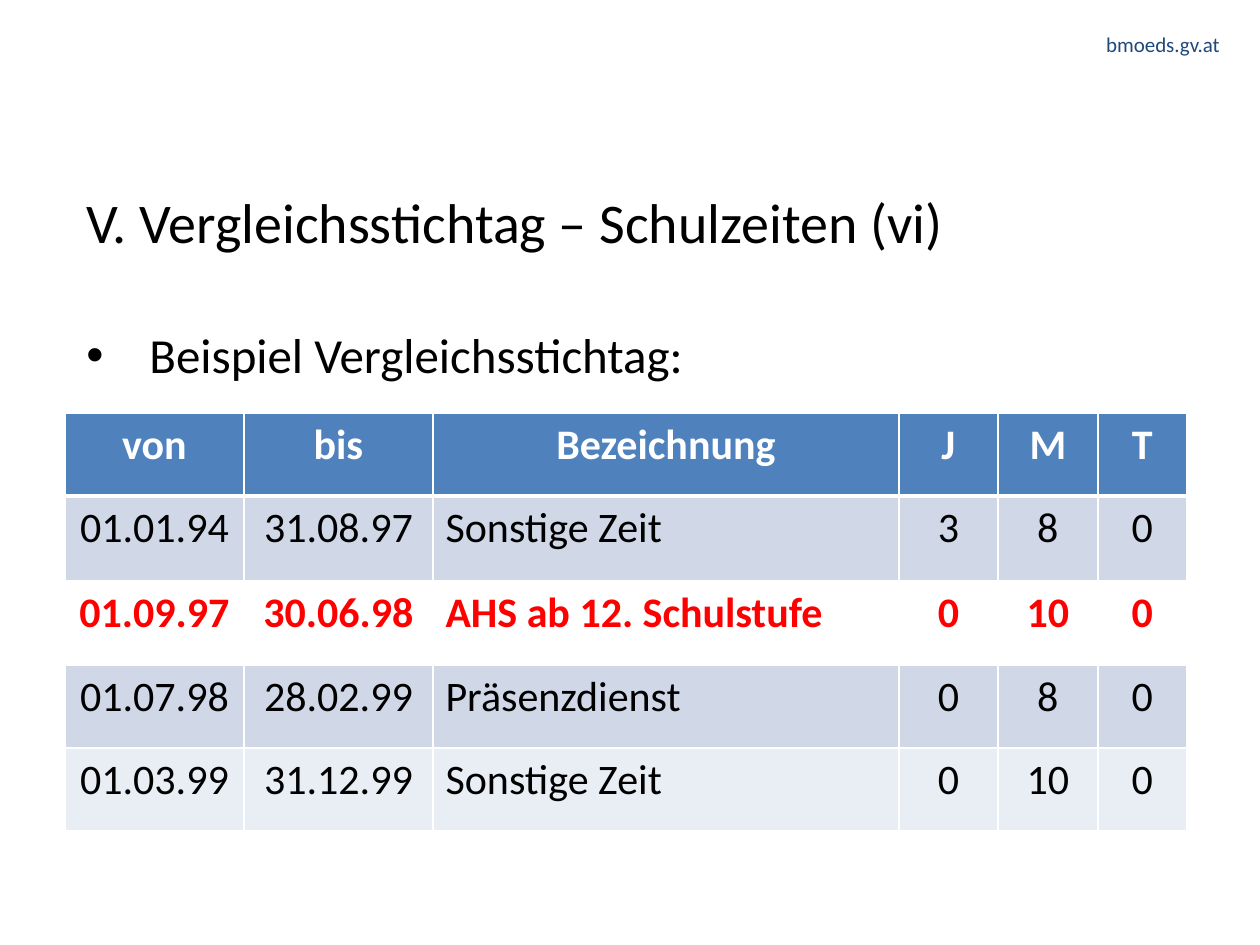
from lxml import etree
from pptx import Presentation
from pptx import util as u
from pptx.dml.color import RGBColor
from pptx.enum import text
from pptx.oxml import ns

BLACK = RGBColor(0, 0, 0)
WHITE = RGBColor(255, 255, 255)
RED = RGBColor(255, 0, 0)
NAVY = RGBColor(0x1F, 0x49, 0x7D)
BLUE = RGBColor(0x4F, 0x81, 0xBD)
BAND = RGBColor(0xD0, 0xD8, 0xE8)
PALE = RGBColor(0xE9, 0xED, 0xF4)
PX = 914400 / 126


def px(*vals):
    return [round(v * PX) for v in vals]


def write(para, words, size, color, bold=False):
    run = para.add_run()
    run.text = words
    font = run.font
    font.name, font.size, font.bold = "Calibri", u.Pt(size), bold
    font.color.rgb = color


prs = Presentation()
prs.slide_width, prs.slide_height = px(1260, 945)
slide = prs.slides.add_slide(prs.slide_layouts[5])

site = slide.shapes.add_textbox(*px(916, 32, 304, 25)).text_frame
site.word_wrap = True
site.margin_left = site.margin_top = site.margin_right = site.margin_bottom = 0
site.paragraphs[0].alignment = text.PP_ALIGN.RIGHT
write(site.paragraphs[0], "bmoeds.gv.at", 12, NAVY)

title = slide.shapes.title
title.left, title.top, title.width, title.height = px(74, 175, 1100, 145)
body = slide.shapes.add_textbox(*px(74, 304, 1150, 586))
heads = [
    (title, "V. Vergleichsstichtag – Schulzeiten (vi)", 32, 71, False),
    (body, "Beispiel Vergleichsstichtag:", 28, 63, True),
]
for box, words, size, indent, dot in heads:
    frame = box.text_frame
    frame.word_wrap = True
    frame.auto_size = text.MSO_AUTO_SIZE.NONE
    frame.vertical_anchor = text.MSO_ANCHOR.TOP
    para = frame.paragraphs[0]
    props = para._p.get_or_add_pPr()
    step = px(indent)[0]
    props.set("marL", str(step))
    props.set("indent", str(-step))
    if dot:
        face = etree.SubElement(props, ns.qn("a:buFont"))
        face.set("typeface", "Arial")
        etree.SubElement(props, ns.qn("a:buChar")).set("char", "•")
    para.alignment = text.PP_ALIGN.LEFT
    para.line_spacing = u.Pt(42)
    write(para, words, size, BLACK)

rows = [
    ("von", "bis", "Bezeichnung", "J", "M", "T"),
    ("01.01.94", "31.08.97", "Sonstige Zeit", "3", "8", "0"),
    ("01.09.97", "30.06.98", "AHS ab 12. Schulstufe", "0", "10", "0"),
    ("01.07.98", "28.02.99", "Präsenzdienst", "0", "8", "0"),
    ("01.03.99", "31.12.99", "Sonstige Zeit", "0", "10", "0"),
]
looks = [
    (BLUE, WHITE, True),
    (BAND, BLACK, False),
    (None, RED, True),
    (BAND, BLACK, False),
    (PALE, BLACK, False),
]
table = slide.shapes.add_table(5, 6, *px(65, 413, 1122, 418)).table
for col, width in zip(table.columns, px(179, 189, 466, 99, 100, 89)):
    col.width = width
for row, height in zip(table.rows, px(83, 85, 84, 83, 83)):
    row.height = height

for r, (row, (fill, color, bold)) in enumerate(zip(rows, looks)):
    for c, words in enumerate(row):
        cell = table.cell(r, c)
        props = cell._tc.get_or_add_tcPr()
        for side in "LRTB":
            thick = (r, side) in ((0, "B"), (1, "T"))
            line = etree.SubElement(props, ns.qn("a:ln" + side))
            line.set("w", str(u.Pt(3 if thick else 1)))
            paint = etree.SubElement(line, ns.qn("a:solidFill"))
            etree.SubElement(paint, ns.qn("a:srgbClr")).set("val", str(WHITE))
        if fill is None:
            cell.fill.background()
        else:
            cell.fill.solid()
            cell.fill.fore_color.rgb = fill
        para = cell.text_frame.paragraphs[0]
        left = r > 0 and c == 2
        para.alignment = text.PP_ALIGN.LEFT if left else text.PP_ALIGN.CENTER
        write(para, words, 24, color, bold)

prs.save("out.pptx")
